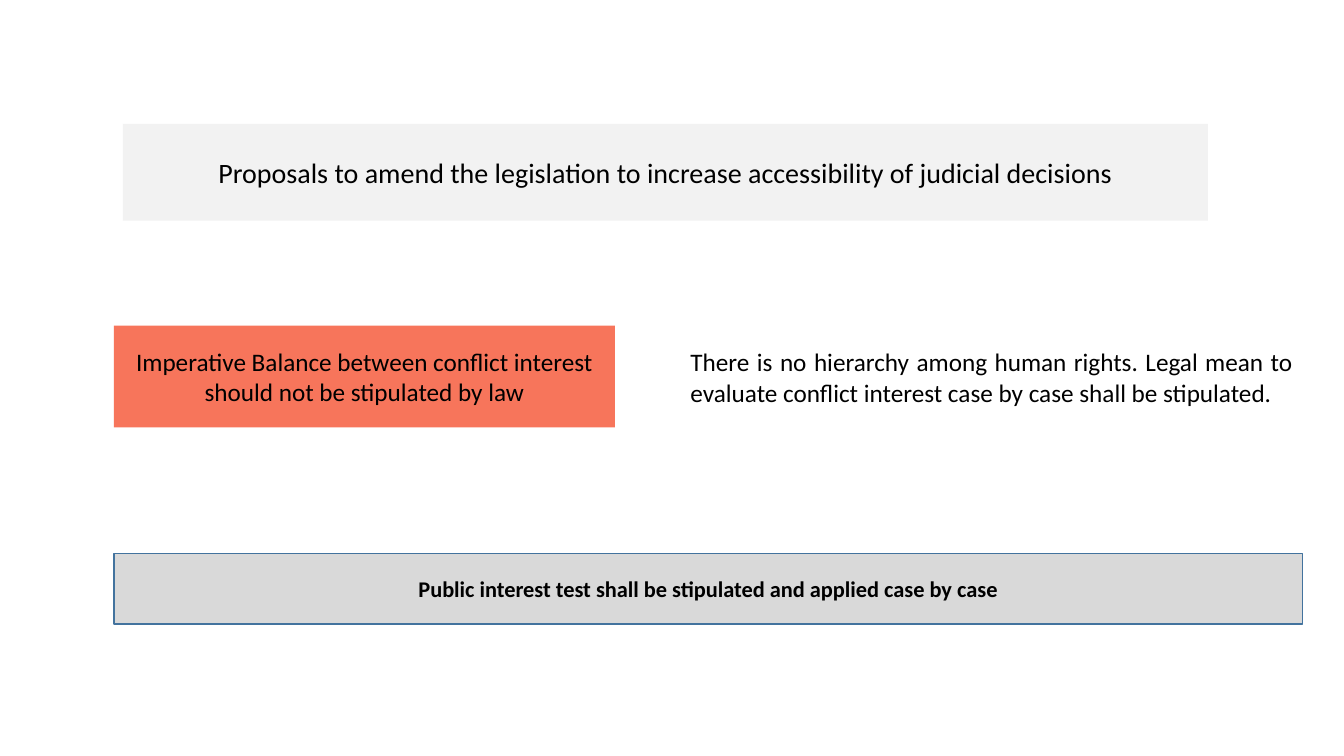
from dataclasses import dataclass

from pptx import Presentation
from pptx.dml.color import RGBColor
from pptx.enum.shapes import MSO_SHAPE
from pptx.enum.text import MSO_ANCHOR, PP_ALIGN
from pptx.slide import Slide
from pptx.util import Emu, Pt

RECTANGLE = MSO_SHAPE.RECTANGLE
MIDDLE = MSO_ANCHOR.MIDDLE
CENTER = PP_ALIGN.CENTER
JUSTIFY = PP_ALIGN.JUSTIFY
EMU_PER_PX = 9144
FONT = "Calibri"
BLACK = "000000"


@dataclass(frozen=True)
class Statement:
    wording: str
    left: int
    top: int
    width: int
    height: int
    size: int
    fill: str | None = None
    outline: str | None = None
    bold: bool = False
    align: PP_ALIGN = CENTER


STATEMENTS = [
    Statement(
        "Proposals to amend the legislation to increase accessibility of judicial decisions",
        122, 123, 1076, 96, 20, fill="F2F2F2",
    ),
    Statement(
        "There is no hierarchy among human rights. Legal mean to evaluate "
        "conflict interest case by case shall be stipulated.",
        675, 288, 617, 172, 18, align=JUSTIFY,
    ),
    Statement(
        "Imperative Balance between conflict interest should not be stipulated by law",
        113, 323, 497, 101, 18, fill="F7755B",
    ),
    Statement(
        "Public interest test shall be stipulated and applied case by case",
        113, 549, 1179, 70, 16, fill="D9D9D9", outline="43739E", bold=True,
    ),
]


def px(length: int) -> Emu:
    return Emu(length * EMU_PER_PX)


def color(value: str) -> RGBColor:
    return RGBColor.from_string(value)


def draw_statement(slide: Slide, statement: Statement) -> None:
    bounds = [px(n) for n in (statement.left, statement.top, statement.width, statement.height)]
    if statement.fill:
        panel = slide.shapes.add_shape(RECTANGLE, *bounds)
        panel.shadow.inherit = False
        panel.fill.solid()
        panel.fill.fore_color.rgb = color(statement.fill)
        if statement.outline:
            panel.line.color.rgb = color(statement.outline)
            panel.line.width = Pt(1)
        else:
            panel.line.fill.background()
    else:
        panel = slide.shapes.add_textbox(*bounds)

    frame = panel.text_frame
    frame.word_wrap = True
    frame.vertical_anchor = MIDDLE
    frame.text = statement.wording
    paragraph = frame.paragraphs[0]
    paragraph.alignment = statement.align
    for run in paragraph.runs:
        run.font.name = FONT
        run.font.size = Pt(statement.size)
        run.font.bold = statement.bold
        run.font.color.rgb = color(BLACK)


def main() -> None:
    deck = Presentation()
    deck.slide_width, deck.slide_height = px(1333), px(750)
    slide = deck.slides.add_slide(deck.slide_layouts[6])
    for statement in STATEMENTS:
        draw_statement(slide, statement)
    deck.save("out.pptx")


if __name__ == "__main__":
    main()
